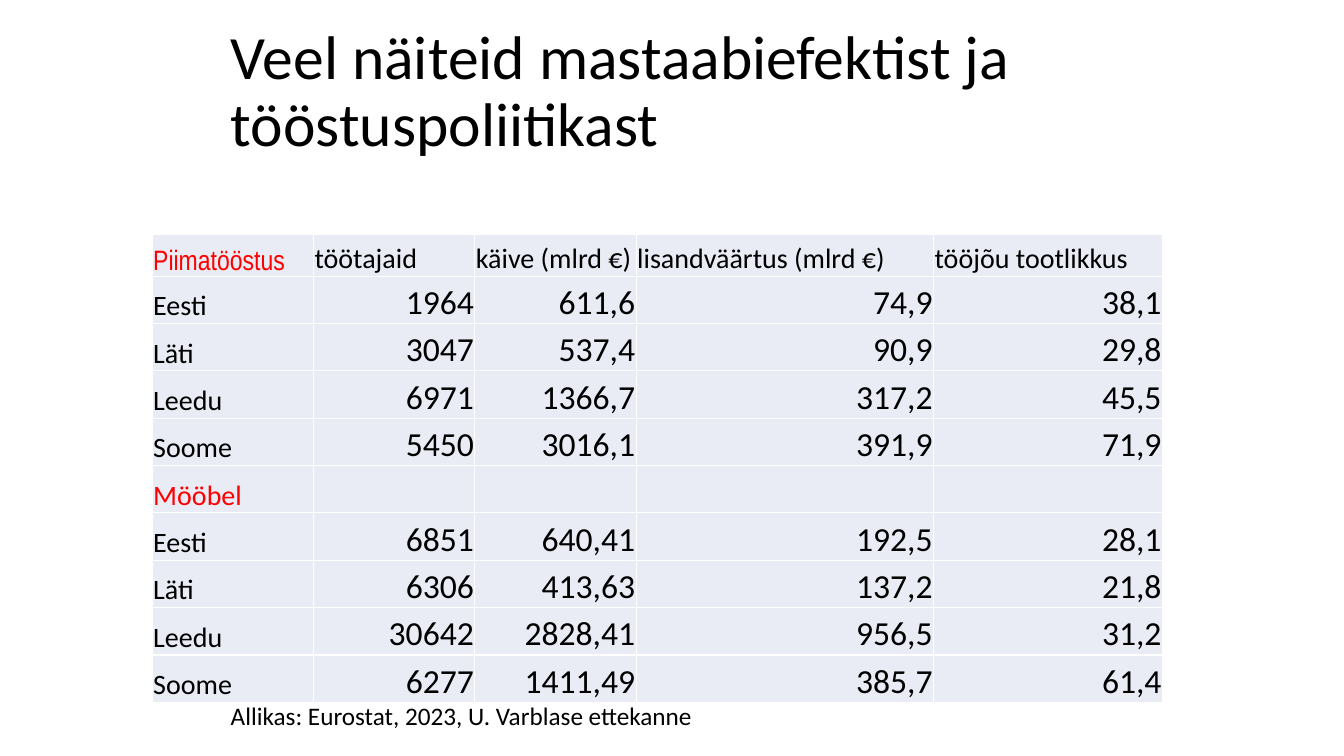
from dataclasses import dataclass
from lxml.etree import SubElement
from pptx import Presentation
from pptx.dml.color import RGBColor
from pptx.enum.text import MSO_ANCHOR as Anchor, MSO_AUTO_SIZE as AutoSize, PP_ALIGN as Align
from pptx.oxml.ns import qn
from pptx.util import Inches, Pt

TITLE = "Veel näiteid mastaabiefektist ja tööstuspoliitikast"
SOURCE = "Allikas: Eurostat, 2023, U. Varblase ettekanne"
HEADER = ["Piimatööstus", "töötajaid", "käive (mlrd €)", "lisandväärtus (mlrd €)", "tööjõu tootlikkus"]
DAIRY = [
    ["Eesti", "1964", "611,6", "74,9", "38,1"],
    ["Läti", "3047", "537,4", "90,9", "29,8"],
    ["Leedu", "6971", "1366,7", "317,2", "45,5"],
    ["Soome", "5450", "3016,1", "391,9", "71,9"],
]
FURNITURE = [
    ["Eesti", "6851", "640,41", "192,5", "28,1"],
    ["Läti", "6306", "413,63", "137,2", "21,8"],
    ["Leedu", "30642", "2828,41", "956,5", "31,2"],
    ["Soome", "6277", "1411,49", "385,7", "61,4"],
]
FURNITURE_HEAD = ["Mööbel", "", "", "", ""]
ROWS = [HEADER, *DAIRY, FURNITURE_HEAD, *FURNITURE]
SECTIONS = (HEADER[0], FURNITURE_HEAD[0])
COL_WIDTHS = [1.6, 1.6, 1.6, 2.95, 2.27]
ROW_HEIGHTS = [0.41] + [0.47] * (len(ROWS) - 1)


@dataclass(frozen=True)
class Theme:
    text: str = "000000"
    section: str = "FF0000"
    cell: str = "E9EBF5"
    border: str = "FFFFFF"
    font: str = "Calibri"
    narrow: str = "Arial Narrow"
    title_size: int = 44
    value_size: int = 24
    label_size: int = 20
    source_size: int = 18


theme = Theme()


def set_attrs(obj, **values):
    for name, value in values.items():
        setattr(obj, name, value)


def write(tf, text, size, color=theme.text, font=theme.font, align=Align.LEFT):
    p = tf.paragraphs[0]
    p.alignment = align
    r = p.add_run()
    r.text = text
    set_attrs(r.font, size=Pt(size), name=font, bold=False)
    r.font.color.rgb = RGBColor.from_string(color)
    return p


def add_borders(cell):
    props = cell._tc.get_or_add_tcPr()
    for side in ("a:lnL", "a:lnR", "a:lnT", "a:lnB"):
        line = SubElement(props, qn(side), w=str(Pt(1)))
        fill = SubElement(line, qn("a:solidFill"))
        SubElement(fill, qn("a:srgbClr"), val=theme.border)


def format_cell(cell, text, is_value):
    set_attrs(cell, vertical_anchor=Anchor.BOTTOM, margin_left=Inches(0.01),
              margin_right=Inches(0.01), margin_top=Inches(0.01), margin_bottom=0)
    add_borders(cell)
    cell.fill.solid()
    cell.fill.fore_color.rgb = RGBColor.from_string(theme.cell)
    if is_value:
        write(cell.text_frame, text, theme.value_size, align=Align.RIGHT)
    elif text:
        color = theme.section if text in SECTIONS else theme.text
        font = theme.narrow if text == HEADER[0] else theme.font
        write(cell.text_frame, text, theme.label_size, color, font)


def add_title(s):
    sp = s.shapes.title
    set_attrs(sp, left=Inches(2.19), top=Inches(0.2), width=Inches(11.5), height=Inches(1.45))
    set_attrs(sp.text_frame, word_wrap=True, auto_size=AutoSize.NONE, vertical_anchor=Anchor.MIDDLE)
    write(sp.text_frame, TITLE, theme.title_size).line_spacing = 0.9


def add_industry_table(s):
    table = s.shapes.add_table(len(ROWS), len(HEADER), Inches(1.51), Inches(2.33),
                               Inches(sum(COL_WIDTHS)), Inches(sum(ROW_HEIGHTS))).table
    set_attrs(table, first_row=False, horz_banding=False)
    for col, width in zip(table.columns, COL_WIDTHS):
        col.width = Inches(width)
    for i, (row, height, texts) in enumerate(zip(table.rows, ROW_HEIGHTS, ROWS)):
        row.height = Inches(height)
        for j, (cell, text) in enumerate(zip(row.cells, texts)):
            format_cell(cell, text, is_value=bool(i and j and text))


def add_source(s):
    tf = s.shapes.add_textbox(Inches(2.19), Inches(6.9), Inches(5.13), Inches(0.4)).text_frame
    set_attrs(tf, word_wrap=False, auto_size=AutoSize.SHAPE_TO_FIT_TEXT)
    write(tf, SOURCE, theme.source_size)


def main():
    prs = Presentation()
    set_attrs(prs, slide_width=Inches(13.33), slide_height=Inches(7.5))
    s = prs.slides.add_slide(prs.slide_layouts.get_by_name("Title Only"))
    add_title(s)
    add_industry_table(s)
    add_source(s)
    prs.save("out.pptx")


if __name__ == "__main__":
    main()
